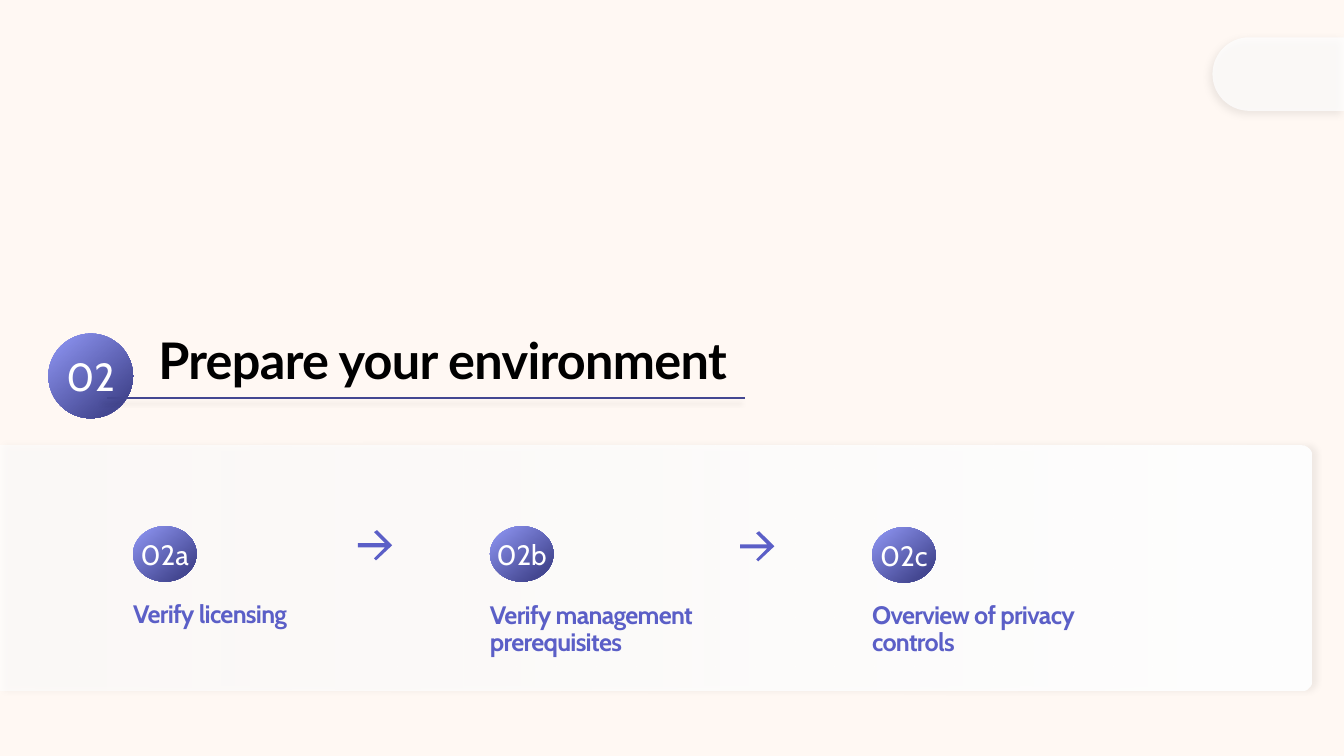
import math

import pptx
import pptx.dml.color
import pptx.enum.shapes
import pptx.enum.text
import pptx.oxml
import pptx.oxml.ns
import pptx.util

Inches = pptx.util.Inches
Pt = pptx.util.Pt
qn = pptx.oxml.ns.qn
SHAPES = pptx.enum.shapes.MSO_SHAPE
ANCHOR = pptx.enum.text.MSO_ANCHOR
ALIGN = pptx.enum.text.PP_ALIGN
AUTO_SIZE = pptx.enum.text.MSO_AUTO_SIZE

COLORS = {
    "background": "FFF8F3",
    "white": "FFFFFF",
    "black": "000000",
    "accent": "5B5FC7",
    "light": "9299F7",
    "dark": "444791",
}
TITLE = "Prepare your environment"
SECTION = "02"
# number, label, left, badge top, label width, label height
STEPS = [
    ("02a", "Verify licensing", 1.32, 5.22, 2.07, 0.27),
    ("02b", "Verify management prerequisites", 4.86, 5.22, 2.37, 0.55),
    ("02c", "Overview of privacy controls", 8.65, 5.23, 2.24, 0.55),
]
LABEL_TOP = 5.97
ARROWS = [(3.55, 5.26), (7.34, 5.27)]
ARROW_OUTLINE = [
    (0.27, 0.17), (0.16, 0.28), (0.18, 0.3), (0.34, 0.15), (0.19, 0),
    (0.16, 0.02), (0.27, 0.13), (0, 0.13), (0, 0.17),
]
TAB_RIGHT, TAB_TOP, TAB_RADIUS = 13.33, 0.37, 0.365
TAB_CENTER = 12.39


def rgb(name):
    return pptx.dml.color.RGBColor.from_string(COLORS[name])


def set_alpha(color_element, percent):
    alpha = pptx.oxml.parse_xml(
        f'<a:alpha {pptx.oxml.ns.nsdecls("a")} val="{percent * 1000}"/>')
    color_element.append(alpha)


def fill_gradient(shape, stops, angle):
    """Fill with two (position, color) stops; angle is clockwise degrees."""
    shape.fill.gradient()
    shape.fill.gradient_angle = 360 - angle
    for stop, (position, color) in zip(shape.fill.gradient_stops, stops):
        stop.position = position
        stop.color.rgb = rgb(color)
    shape.line.fill.background()
    shape.shadow.inherit = False


def add_shadow(shape, alpha, blur, distance, angle):
    shape.shadow.inherit = False
    effects = next(shape.element.iter(qn("a:effectLst")))
    effects.append(pptx.oxml.parse_xml(
        f'<a:outerShdw {pptx.oxml.ns.nsdecls("a")} blurRad="{Pt(blur)}" '
        f'dist="{Pt(distance)}" dir="{angle * 60000}" algn="ctr" rotWithShape="0">'
        f'<a:srgbClr val="{COLORS["black"]}"><a:alpha val="{alpha * 1000}"/></a:srgbClr>'
        "</a:outerShdw>"))


def write(shape, text, *, size, font, color, bold=False, tracking=None,
          line_spacing=None, align=None, anchor=ANCHOR.BOTTOM, wrap=True, grow=False):
    frame = shape.text_frame
    frame.margin_left = frame.margin_right = frame.margin_top = frame.margin_bottom = 0
    frame.vertical_anchor = anchor
    frame.word_wrap = wrap
    frame.auto_size = AUTO_SIZE.SHAPE_TO_FIT_TEXT if grow else AUTO_SIZE.NONE
    para = frame.paragraphs[0]
    para.alignment = align
    para.line_spacing = line_spacing
    span = para.add_run()
    span.text = text
    span.font.size = Pt(size)
    span.font.name = font
    span.font.bold = bold
    span.font.color.rgb = rgb(color)
    if tracking is not None:
        for properties in shape.element.iter(qn("a:rPr")):
            properties.set("spc", str(round(tracking * 100)))


def add_outline(page, points, color):
    corners = [(Inches(x), Inches(y)) for x, y in points]
    builder = page.shapes.build_freeform(*corners[0])
    builder.add_line_segments(corners[1:], close=True)
    shape = builder.convert_to_shape()
    shape.fill.solid()
    shape.fill.fore_color.rgb = rgb(color)
    shape.line.fill.background()
    shape.shadow.inherit = False
    return shape


def add_badge(page, text, left, top, width, height, size):
    badge = page.shapes.add_shape(
        SHAPES.OVAL, Inches(left), Inches(top), Inches(width), Inches(height))
    fill_gradient(badge, [(0, "light"), (0.83, "dark")], 50)
    write(badge, text, size=size, font="Cabin", color="white",
          align=ALIGN.CENTER, anchor=ANCHOR.MIDDLE, wrap=False)


def add_panel(page):
    panel = page.shapes.add_shape(
        SHAPES.ROUND_2_SAME_RECTANGLE, Inches(5.29), Inches(-0.87),
        Inches(2.43), Inches(13.01))
    panel.rotation = 90
    panel.adjustments[0] = 0.041
    panel.adjustments[1] = 0
    fill_gradient(panel, [(0, "white"), (1, "white")], 90)
    set_alpha(list(panel.element.iter(qn("a:srgbClr")))[-1], 64)
    add_shadow(panel, 5, 4, 3, 0)


def add_corner_tab(page):
    """Add the tab at the right edge, rounded on its left side."""
    middle = TAB_TOP + TAB_RADIUS
    arc = [(TAB_CENTER + TAB_RADIUS * math.cos(math.radians(degrees)),
            middle + TAB_RADIUS * math.sin(math.radians(degrees)))
           for degrees in range(90, 271, 5)]
    corners = [(TAB_RIGHT, TAB_TOP), (TAB_RIGHT, TAB_TOP + 2 * TAB_RADIUS)]
    tab = add_outline(page, corners + arc, "white")
    set_alpha(next(tab.element.iter(qn("a:srgbClr"))), 74)
    add_shadow(tab, 10, 6, 3, 135)


def add_title_line(page):
    line = page.shapes.add_connector(
        pptx.enum.shapes.MSO_CONNECTOR.STRAIGHT,
        Inches(1.06), Inches(3.95), Inches(7.39), Inches(3.95))
    line.line.color.rgb = rgb("dark")
    line.line.width = Pt(1)
    properties = line.element.find(qn("p:spPr"))
    properties.append(pptx.oxml.parse_xml(
        f'<a:effectLst {pptx.oxml.ns.nsdecls("a")}/>'))
    next(line.element.iter(qn("a:effectLst"))).append(pptx.oxml.parse_xml(
        f'<a:outerShdw {pptx.oxml.ns.nsdecls("a")} blurRad="{Pt(3)}" '
        f'dist="{Pt(5)}" dir="8100000" algn="ctr" rotWithShape="0">'
        f'<a:srgbClr val="{COLORS["black"]}"><a:alpha val="13000"/></a:srgbClr>'
        "</a:outerShdw>"))


def main():
    deck = pptx.Presentation()
    deck.slide_width, deck.slide_height = Inches(13.33), Inches(7.5)
    page = deck.slides.add_slide(deck.slide_layouts[5])
    page.background.fill.solid()
    page.background.fill.fore_color.rgb = rgb("background")

    add_panel(page)
    add_corner_tab(page)
    title = page.shapes.title
    title.left, title.top = Inches(1.57), Inches(3.32)
    title.width, title.height = Inches(10), Inches(0.55)
    write(title, TITLE, size=36, font="Lato", color="black", bold=True,
          tracking=-0.5, line_spacing=0.9, align=ALIGN.LEFT, grow=True)
    add_badge(page, SECTION, 0.48, 3.31, 0.84, 0.84, 28)
    add_title_line(page)

    for number, label, left, top, width, height in STEPS:
        add_badge(page, number, left, top, 0.63, 0.55, 20)
        box = page.shapes.add_textbox(
            Inches(left), Inches(LABEL_TOP), Inches(width), Inches(height))
        write(box, label, size=18, font="Cabin", color="accent", bold=True,
              tracking=-0.5, line_spacing=0.9, grow=True)
    for left, top in ARROWS:
        add_outline(page, [(left + x, top + y) for x, y in ARROW_OUTLINE], "accent")

    deck.save("out.pptx")


if __name__ == "__main__":
    main()
